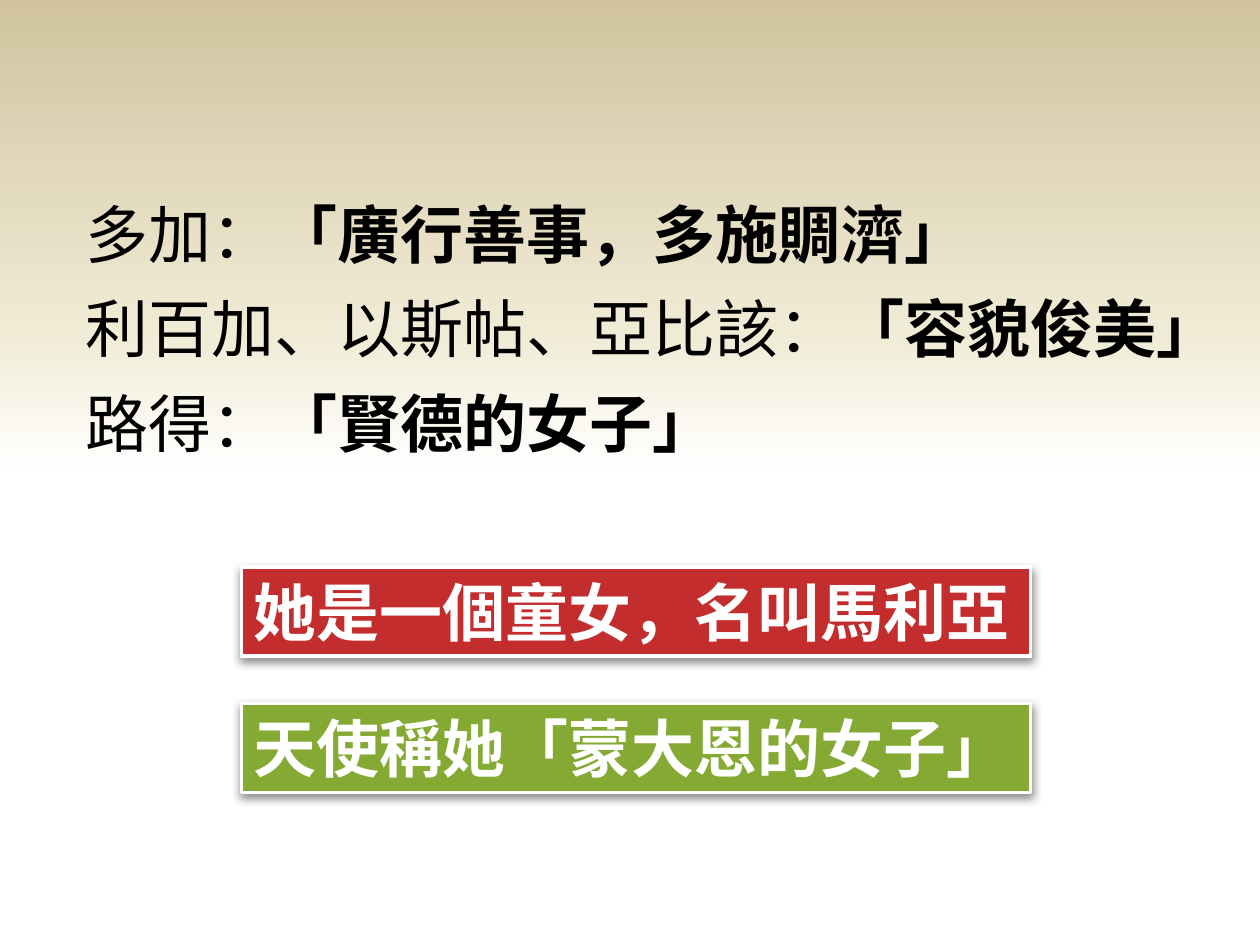
from lxml.etree import SubElement
from pptx import Presentation
from pptx.dml.color import RGBColor
from pptx.enum.shapes import MSO_SHAPE
from pptx.enum.text import MSO_ANCHOR, MSO_AUTO_SIZE, PP_ALIGN
from pptx.oxml import parse_xml
from pptx.oxml.ns import nsdecls, qn
from pptx.util import Pt

FONT = "Noto Sans CJK SC"
BLACK = RGBColor(0x00, 0x00, 0x00)
WHITE = RGBColor(0xFF, 0xFF, 0xFF)
CREAM = RGBColor(0xF0, 0xEB, 0xD5)
SAND = RGBColor(0xD1, 0xC3, 0x9F)
RED = RGBColor(0xC3, 0x2D, 0x2E)
GREEN = RGBColor(0x84, 0xAA, 0x33)
LINE_HEIGHT = 51

WOMEN = [
    ("多加：", "「廣行善事，多施賙濟」", 523.5),
    ("利百加、以斯帖、亞比該：", "「容貌俊美」", 669),
    ("路得：", "「賢德的女子」", 378),
]
MARY = [
    ("她是一個童女，名叫馬利亞", RED),
    ("天使稱她「蒙大恩的女子」", GREEN),
]


def set_background(s):
    """Fill the slide with a gradient rising from white to sand."""
    fill = s.background.fill
    fill.gradient()
    fill.gradient_angle = 90
    stops = s.background._cSld.find(".//" + qn("a:gsLst"))
    stops.clear()
    for position, color in ((50, WHITE), (65, CREAM), (100, SAND)):
        stop = SubElement(stops, qn("a:gs"), pos=str(position * 1000))
        SubElement(stop, qn("a:srgbClr"), val=str(color))


def write_line(sp, runs, color):
    """Write one unwrapped line from (text, bold) runs."""
    tf = sp.text_frame
    tf.word_wrap = False
    tf.auto_size = MSO_AUTO_SIZE.SHAPE_TO_FIT_TEXT
    tf.vertical_anchor = MSO_ANCHOR.TOP
    p = tf.paragraphs[0]
    p.alignment = PP_ALIGN.LEFT
    for text, bold in runs:
        r = p.add_run()
        r.text = text
        r.font.size = Pt(36)
        r.font.bold = bold
        r.font.name = FONT
        r.font.color.rgb = color
        SubElement(r.font._element, qn("a:ea"), typeface=FONT)


def add_shadow(sp):
    """Give a shape a soft shadow straight below it."""
    sp._element.spPr.append(parse_xml(
        f'<a:effectLst {nsdecls("a")}>'
        f'<a:outerShdw blurRad="{Pt(5)}" dist="{Pt(2)}" dir="5400000" rotWithShape="0">'
        '<a:srgbClr val="000000"><a:alpha val="43000"/></a:srgbClr>'
        '</a:outerShdw></a:effectLst>'))


def add_women(s, left, top, pitch):
    """Stack the lines that pair each name with its praise."""
    for i, (name, praise, width) in enumerate(WOMEN):
        sp = s.shapes.add_textbox(
            Pt(left), Pt(top + i * pitch), Pt(width), Pt(LINE_HEIGHT))
        write_line(sp, [(name, False), (praise, True)], BLACK)


def add_mary(s, left, top, width, pitch):
    """Stack the coloured banners about Mary."""
    for i, (text, color) in enumerate(MARY):
        sp = s.shapes.add_shape(
            MSO_SHAPE.RECTANGLE,
            Pt(left), Pt(top + i * pitch), Pt(width), Pt(LINE_HEIGHT))
        sp.fill.solid()
        sp.fill.fore_color.rgb = color
        sp.line.color.rgb = WHITE
        sp.line.width = Pt(2)
        add_shadow(sp)
        write_line(sp, [(text, True)], WHITE)


def main():
    """Build and save the slide."""
    prs = Presentation()
    prs.slide_width, prs.slide_height = Pt(720), Pt(540)
    s = prs.slides.add_slide(prs.slide_layouts[6])
    set_background(s)
    add_women(s, left=42, top=108, pitch=54)
    add_mary(s, left=138, top=324, width=451, pitch=78)
    prs.save("out.pptx")


if __name__ == "__main__":
    main()
